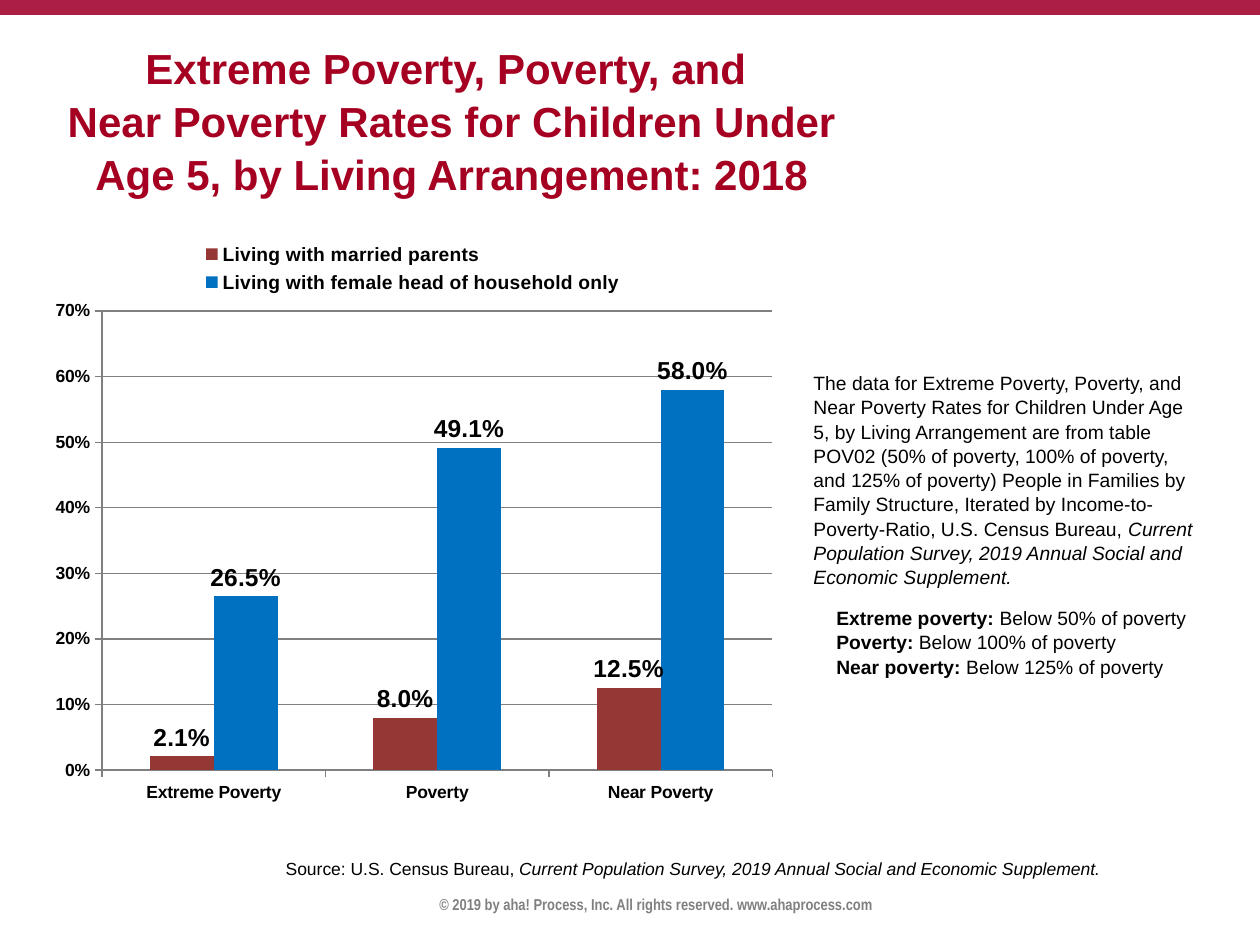
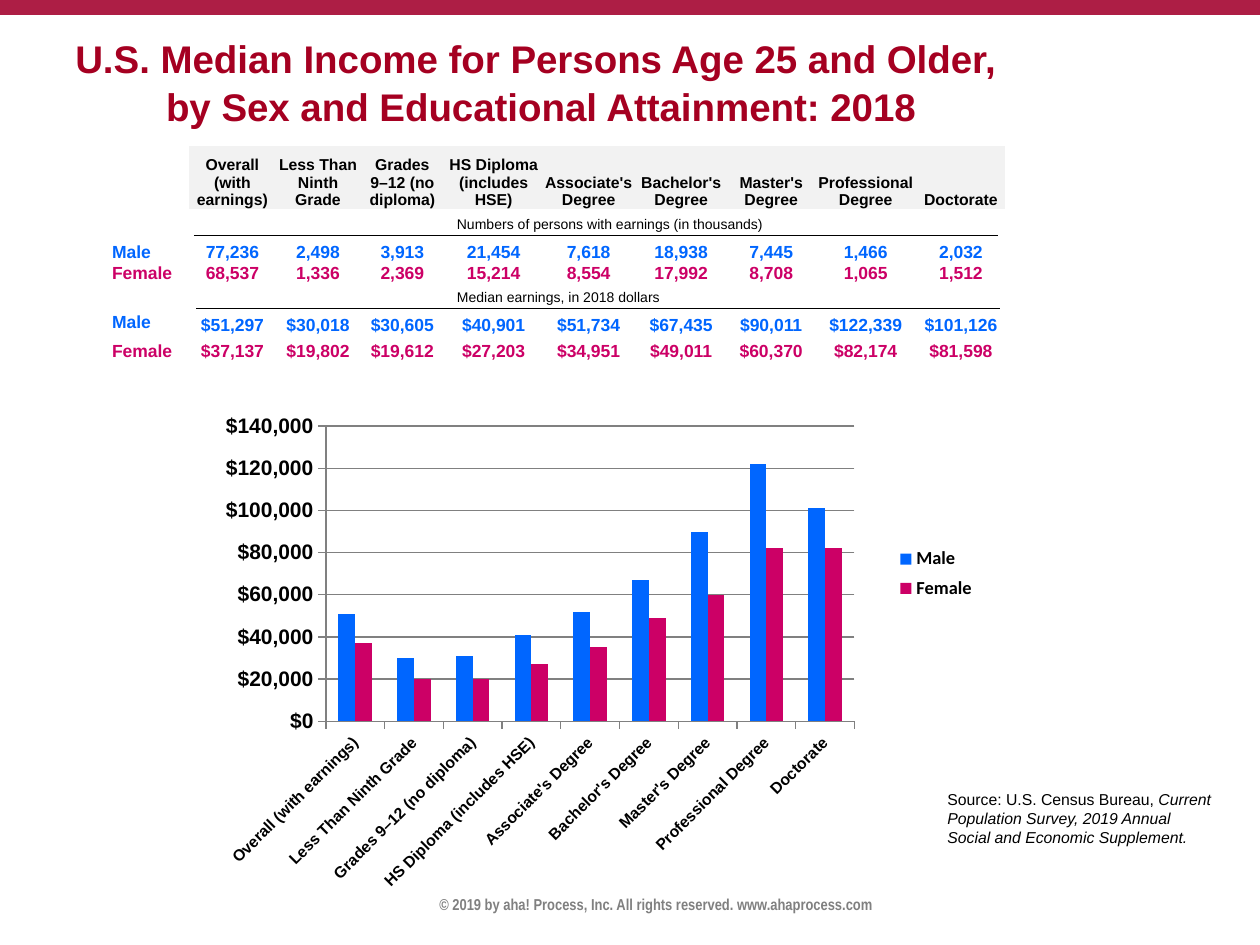
import pptx
import pptx.chart.data
import pptx.dml.color
import pptx.enum.chart
import pptx.enum.shapes
import pptx.enum.text
import pptx.oxml
import pptx.oxml.ns
import pptx.util
from pptx.util import Cm, Pt

BLACK, WHITE, GREY = "000000", "FFFFFF", "808080"
BAND, TITLE, HEADER_FILL = "AD1E45", "A50021", "F2F2F2"
MALE, FEMALE = "0066FF", "CC0066"
NO_STYLE_NO_GRID = "{2D5ABB26-0587-4C30-8999-92F81FD0307C}"

ALIGN = pptx.enum.text.PP_ALIGN
ANCHOR = pptx.enum.text.MSO_ANCHOR
LEGEND = pptx.enum.chart.XL_LEGEND_POSITION

# Text is a list of paragraphs; a paragraph is a list of (text, style) runs.
COPYRIGHT = [[("© 2019 by aha! Process, Inc. All rights reserved. www.ahaprocess.com", "b")]]
SURVEY = ("Current Population Survey, 2019 Annual Social and Economic Supplement.", "i")
SOURCE = [[("Source: U.S. Census Bureau, ", ""), SURVEY]]

POVERTY_TITLE = [
    [("Extreme Poverty, Poverty, and ", "b")],
    [("Near Poverty Rates for Children Under Age 5, by Living Arrangement: 2018", "b")],
]
POVERTY_NOTE = [[
    ("The data for Extreme Poverty, Poverty, and Near Poverty Rates for Children Under "
     "Age 5, by Living Arrangement are from table POV02 (50% of poverty, 100% of poverty, "
     "and 125% of poverty) People in Families by Family Structure, Iterated by "
     "Income-to-Poverty-Ratio, U.S. Census Bureau, ", ""),
    SURVEY,
]]
POVERTY_LEVELS = [
    [("Extreme poverty: ", "b"), ("Below 50% of poverty", "")],
    [("Poverty:", "b"), (" Below 100% of poverty", "")],
    [("Near poverty: ", "b"), ("Below 125% of poverty", "")],
]
POVERTY_RATES = {
    "categories": ["Extreme Poverty", "Poverty", "Near Poverty"],
    "series": [
        ("Living with married parents", "953735", [0.021, 0.08, 0.125]),
        ("Living with female head of household only", "0070C0", [0.265, 0.491, 0.58]),
    ],
}

INCOME_TITLE = [
    [("U.S. Median Income for Persons Age 25 and Older, ", "b")],
    [("by Sex and Educational Attainment: 2018", "b")],
]
EDUCATION = [
    "Overall (with earnings)", "Less Than Ninth Grade", "Grades\n9–12 (no diploma)",
    "HS Diploma (includes HSE)", "Associate's Degree", "Bachelor's Degree",
    "Master's Degree", "Professional Degree", "Doctorate",
]
PERSONS = [
    ("Male", MALE, [77236, 2498, 3913, 21454, 7618, 18938, 7445, 1466, 2032]),
    ("Female", FEMALE, [68537, 1336, 2369, 15214, 8554, 17992, 8708, 1065, 1512]),
]
EARNINGS = [
    ("Male", MALE, [51297, 30018, 30605, 40901, 51734, 67435, 90011, 122339, 101126]),
    ("Female", FEMALE, [37137, 19802, 19612, 27203, 34951, 49011, 60370, 82174, 81598]),
]
# heading, last column of the heading, number pattern, rows
TABLE_SECTIONS = [
    ("Numbers of persons with earnings (in thousands)", 7, "{:,}", PERSONS),
    ("Median earnings, in 2018 dollars", 6, "${:,}", EARNINGS),
]
HEADING_COLUMN = 4
COLUMN_WIDTHS = [1.55, 1.75, 1.7, 1.7, 1.98, 1.85, 1.88, 1.75, 2.06, 1.78]
ROW_HEIGHTS = [1.27, 0.58, 0.46, 0.43, 0.58, 0.46, 0.51]


def rgb(hex_color):
    return pptx.dml.color.RGBColor.from_string(hex_color)


def cm(*lengths):
    return [Cm(length) for length in lengths]


def style_font(font, size, color=BLACK, name="Arial", bold=None, italic=None):
    font.size, font.name, font.bold, font.italic = Pt(size), name, bold, italic
    font.color.rgb = rgb(color)


def add_text(slide, box, paragraphs, size, color=BLACK, font="Arial", align=ALIGN.LEFT,
             anchor=ANCHOR.TOP, spacing=None):
    frame = slide.shapes.add_textbox(*cm(*box)).text_frame
    frame.word_wrap, frame.vertical_anchor = True, anchor
    for index, runs in enumerate(paragraphs):
        paragraph = frame.add_paragraph() if index else frame.paragraphs[0]
        paragraph.alignment, paragraph.line_spacing = align, spacing
        for text, style in runs:
            run = paragraph.add_run()
            run.text = text
            style_font(run.font, size, color, font, style == "b", style == "i")
    return frame


def add_title(slide, box, paragraphs, size, anchor=ANCHOR.TOP):
    add_text(slide, box, paragraphs, size, TITLE, align=ALIGN.CENTER, anchor=anchor,
             spacing=1.05)


def add_base_slide(deck):
    """Add a blank slide with the top band and the copyright line."""
    slide = deck.slides.add_slide(deck.slide_layouts[6])
    add_text(slide, (4.24, 17.91, 17.96, 0.64), COPYRIGHT, 9, GREY, "Arial Narrow",
             ALIGN.CENTER)
    band = slide.shapes.add_shape(pptx.enum.shapes.MSO_SHAPE.RECTANGLE,
                                  *cm(0, 0, 25.4, 0.3))
    band.shadow.inherit = False
    band.fill.solid()
    band.fill.fore_color.rgb = rgb(BAND)
    band.line.fill.background()
    return slide


def set_layout(element, position, fractions, inner=False):
    """Fix a chart part at x, y, width, height, as fractions of the chart."""
    qn = pptx.oxml.ns.qn
    for layout in element.findall(qn("c:layout")):
        element.remove(layout)
    settings = [("layoutTarget", "inner")] if inner else []
    settings += [("xMode", "edge"), ("yMode", "edge")]
    settings += zip("xywh", fractions)
    items = "".join(f'<c:{tag} val="{value}"/>' for tag, value in settings)
    element.insert(position, pptx.oxml.parse_xml(
        f'<c:layout {pptx.oxml.ns.nsdecls("c")}><c:manualLayout>{items}'
        "</c:manualLayout></c:layout>"))


def add_columns(slide, box, categories, series, plot, legend, legend_side, legend_font,
                top, step, number_format, category_size, value_size):
    data = pptx.chart.data.CategoryChartData()
    data.categories = categories
    for name, _, values in series:
        data.add_series(name, values)
    chart = slide.shapes.add_chart(
        pptx.enum.chart.XL_CHART_TYPE.COLUMN_CLUSTERED, *cm(*box), data).chart
    style_font(chart.font, 10, name="Calibri")
    chart.has_title = False

    columns = chart.plots[0]
    columns.gap_width, columns.overlap, columns.vary_by_categories = 150, 0, False
    for column, (_, color, _) in zip(columns.series, series):
        column.format.fill.solid()
        column.format.fill.fore_color.rgb = rgb(color)
        column.invert_if_negative = False

    values_axis, category_axis = chart.value_axis, chart.category_axis
    values_axis.minimum_scale, values_axis.maximum_scale = 0, top
    values_axis.major_unit = step
    values_axis.tick_labels.number_format = number_format
    values_axis.tick_labels.number_format_is_linked = False
    values_axis.has_major_gridlines = True
    for axis, size in ((values_axis, value_size), (category_axis, category_size)):
        axis.major_tick_mark = pptx.enum.chart.XL_TICK_MARK.OUTSIDE
        style_font(axis.tick_labels.font, size, bold=True)
    for part in (values_axis, category_axis, values_axis.major_gridlines):
        part.format.line.color.rgb = rgb(GREY)
        part.format.line.width = Pt(0.75)

    chart.has_legend = True
    chart.legend.position = legend_side
    chart.legend.include_in_layout = legend_side == LEGEND.TOP
    font_name, font_size = legend_font
    style_font(chart.legend.font, font_size, name=font_name, bold=True)
    set_layout(chart._chartSpace.xpath("c:chart/c:legend")[0], 1, legend)
    set_layout(chart._chartSpace.xpath("c:chart/c:plotArea")[0], 0, plot, inner=True)
    return chart


def fill_cell(cell, text, size, color=BLACK, bold=True, fill=None, align=ALIGN.CENTER,
              anchor=ANCHOR.BOTTOM, margins=(0, 0)):
    cell.margin_left = cell.margin_right = Cm(margins[0])
    cell.margin_top = cell.margin_bottom = Cm(margins[1])
    cell.vertical_anchor = anchor
    if fill:
        cell.fill.solid()
        cell.fill.fore_color.rgb = rgb(fill)
    else:
        cell.fill.background()
    cell.text_frame.text = text
    for paragraph in cell.text_frame.paragraphs:
        paragraph.alignment = align
        for run in paragraph.runs:
            style_font(run.font, size, color, bold=bold)
        if not text:
            paragraph._p.get_or_add_endParaRPr().set("sz", str(size * 100))


def add_income_table(slide):
    table = slide.shapes.add_table(
        len(ROW_HEIGHTS), len(COLUMN_WIDTHS),
        *cm(2.26, 2.95, sum(COLUMN_WIDTHS), sum(ROW_HEIGHTS))).table
    table.first_row = table.horz_banding = False
    table._tbl.tblPr.find(pptx.oxml.ns.qn("a:tableStyleId")).text = NO_STYLE_NO_GRID
    for column, width in zip(table.columns, COLUMN_WIDTHS):
        column.width = Cm(width)
    for row, height in zip(table.rows, ROW_HEIGHTS):
        row.height = Cm(height)
    for cell in table.iter_cells():
        fill_cell(cell, "", 8)
    for column, level in enumerate(EDUCATION, 1):
        fill_cell(table.cell(0, column), level, 9, fill=HEADER_FILL)

    row = 1
    for heading, last_column, pattern, groups in TABLE_SECTIONS:
        heading_cell = table.cell(row, HEADING_COLUMN)
        heading_cell.merge(table.cell(row, last_column))
        fill_cell(heading_cell, heading, 8, bold=False, align=ALIGN.LEFT,
                  anchor=ANCHOR.MIDDLE, margins=(0.25, 0.13))
        for row, (sex, color, numbers) in enumerate(groups, row + 1):
            sex_anchor = ANCHOR.TOP if row == 5 else ANCHOR.BOTTOM
            fill_cell(table.cell(row, 0), sex, 10, color, align=ALIGN.LEFT,
                      anchor=sex_anchor)
            for column, number in enumerate(numbers, 1):
                fill_cell(table.cell(row, column), pattern.format(number), 10, color,
                          fill=WHITE)
        row += 1


def add_rule(slide, left, top, width):
    rule = slide.shapes.add_connector(pptx.enum.shapes.MSO_CONNECTOR.STRAIGHT,
                                      *cm(left, top, left + width, top))
    rule.line.color.rgb = rgb(BLACK)
    rule.line.width = Pt(0.75)
    rule._element.spPr.append(
        pptx.oxml.parse_xml(f'<a:effectLst {pptx.oxml.ns.nsdecls("a")}/>'))


def build_poverty_slide(deck):
    slide = add_base_slide(deck)
    add_text(slide, (5.51, 17.17, 17.15, 0.69), SOURCE, 10)
    note = add_text(slide, (16.15, 7.34, 8.26, 6.76), POVERTY_NOTE + POVERTY_LEVELS, 11,
                    spacing=1.05)
    levels = note.paragraphs[len(POVERTY_NOTE):]
    levels[0].space_before = Pt(9.5)
    for level in levels:
        properties = level._p.get_or_add_pPr()
        properties.set("marL", str(Cm(0.46)))
        properties.set("indent", "0")
    add_title(slide, (0.43, 0.61, 17.35, 3.61), POVERTY_TITLE, 24, ANCHOR.MIDDLE)
    chart = add_columns(
        slide, (0.43, 4.42, 16.28, 12.34), **POVERTY_RATES,
        plot=(0.1, 0.15, 0.83, 0.75), legend=(0.22, 0.03, 0.53, 0.1),
        legend_side=LEGEND.TOP, legend_font=("Arial", 11), top=0.7, step=0.1,
        number_format="0%", category_size=10, value_size=10)
    for column in chart.plots[0].series:
        labels = column.data_labels
        labels.show_value = True
        labels.number_format, labels.number_format_is_linked = "0.0%", False
        labels.position = pptx.enum.chart.XL_LABEL_POSITION.OUTSIDE_END
        style_font(labels.font, 14, bold=True)


def build_income_slide(deck):
    slide = add_base_slide(deck)
    add_income_table(slide)
    add_title(slide, (0.43, 0.53, 20.96, 2.54), INCOME_TITLE, 22)
    add_text(slide, (18.85, 15.8, 5.92, 1.42), SOURCE, 9)
    add_rule(slide, 3.91, 4.75, 16.2)
    add_rule(slide, 3.96, 6.22, 16.2)
    rounded_earnings = [(sex, color, [round(amount, -3) for amount in amounts])
                        for sex, color, amounts in EARNINGS]
    chart = add_columns(
        slide, (4.22, 7.82, 15.67, 11.02),
        [level.replace("\n", " ") for level in EDUCATION], rounded_earnings,
        plot=(0.15, 0.07, 0.68, 0.54), legend=(0.87, 0.28, 0.13, 0.12),
        legend_side=LEGEND.RIGHT, legend_font=("Calibri", 10.5), top=140000, step=20000,
        number_format="\\$#,##0", category_size=9, value_size=12)
    label_body = chart._chartSpace.xpath("//c:catAx/c:txPr/a:bodyPr")[0]
    label_body.set("rot", "-2700000")
    label_body.set("vert", "horz")


def main():
    deck = pptx.Presentation()
    deck.slide_width, deck.slide_height = cm(25.4, 19.05)
    build_poverty_slide(deck)
    build_income_slide(deck)
    deck.save("out.pptx")


if __name__ == "__main__":
    main()
